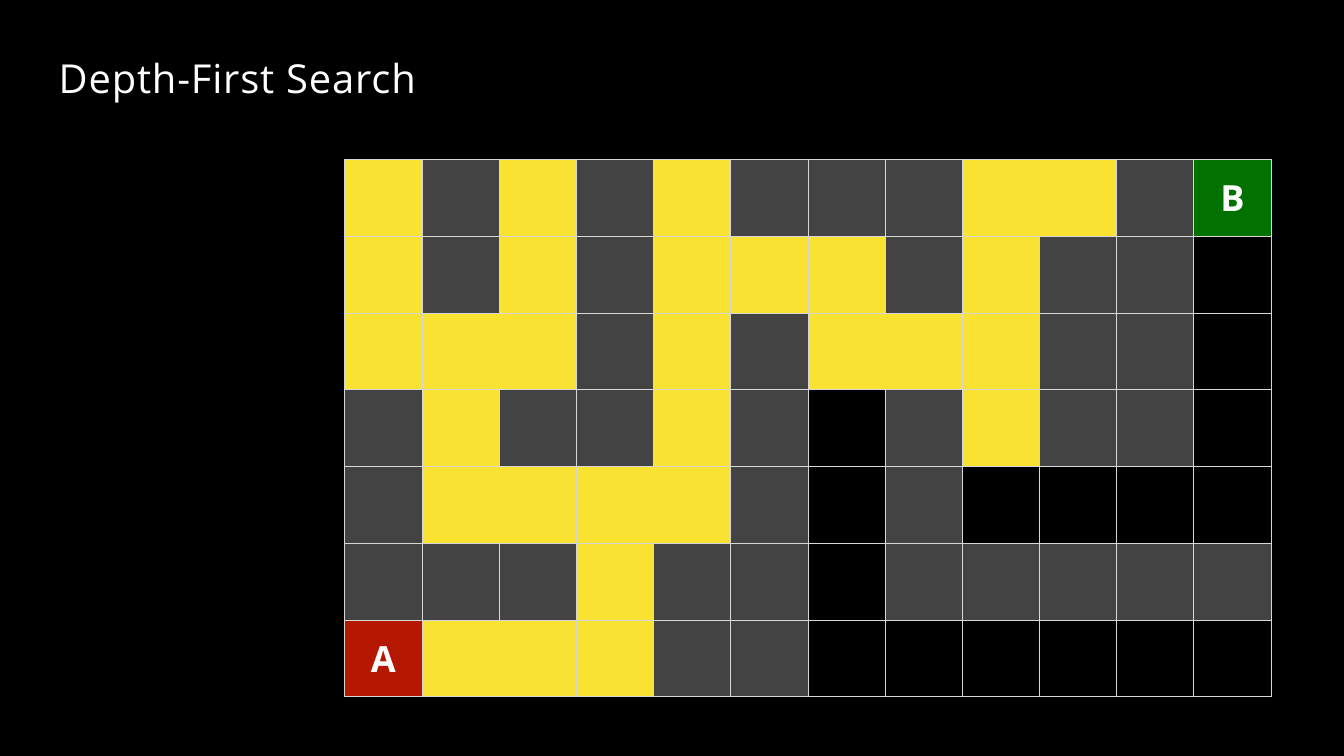
from lxml import etree
from pptx import Presentation
from pptx.dml.color import RGBColor
from pptx.enum import text
from pptx.oxml import ns
from pptx.util import Inches, Pt

TITLE = "Depth-First Search"
# "#" wall, "*" explored, "." unexplored, "A" start, "B" goal
MAZE = [
    "*#*#*###**#B",
    "*#*#***#*##.",
    "***#*#***##.",
    "#*##*#.#*##.",
    "#****#.#....",
    "###*##.#####",
    "A***##......",
]
COLORS = {
    "#": "434343",
    "*": "FAE232",
    ".": "000000",
    "A": "B51700",
    "B": "017100",
    "text": "FFFFFF",
    "border": "D6D7D6",
}
MAZE_LEFT, MAZE_TOP, MAZE_WIDTH, MAZE_HEIGHT = 5.64, 2.61, 15.16, 8.79


def color(name):
    return RGBColor.from_string(COLORS[name])


def write(paragraph, words, size, spacing, bold=False):
    """Add one run; spacing is the gap between letters in points."""
    run = paragraph.add_run()
    run.text = words
    font_format = {"name": "Open Sans", "size": Pt(size), "bold": bold}
    for key, value in font_format.items():
        setattr(run.font, key, value)
    run.font.color.rgb = color("text")
    run._r.get_or_add_rPr().set("spc", str(int(spacing * 100)))


def add_borders(cell):
    properties = cell._tc.get_or_add_tcPr()
    for side in ("lnL", "lnR", "lnT", "lnB"):
        line = etree.SubElement(properties, ns.qn(f"a:{side}"), w=str(Pt(1)))
        fill = etree.SubElement(line, ns.qn("a:solidFill"))
        etree.SubElement(fill, ns.qn("a:srgbClr"), val=COLORS["border"])


def add_title(slide):
    frame = slide.shapes.add_textbox(
        Inches(0.96), Inches(0.86), Inches(12.65), Inches(0.81)).text_frame
    frame_format = {"margin_left": 0, "margin_right": 0, "margin_top": Inches(0.01),
                    "margin_bottom": 0, "word_wrap": True}
    for key, value in frame_format.items():
        setattr(frame, key, value)
    write(frame.paragraphs[0], TITLE, 47, 1)


def add_maze(slide):
    row_count, column_count = len(MAZE), len(MAZE[0])
    maze = slide.shapes.add_table(
        row_count, column_count, Inches(MAZE_LEFT), Inches(MAZE_TOP),
        Inches(MAZE_WIDTH), Inches(MAZE_HEIGHT)).table
    maze.first_row = maze.horz_banding = False
    cell_format = {"margin_left": 0, "margin_right": 0, "margin_top": 0,
                   "margin_bottom": 0, "vertical_anchor": text.MSO_ANCHOR.MIDDLE}
    for row, marks in enumerate(MAZE):
        for column, mark in enumerate(marks):
            cell = maze.cell(row, column)
            for key, value in cell_format.items():
                setattr(cell, key, value)
            add_borders(cell)
            cell.fill.solid()
            cell.fill.fore_color.rgb = color(mark)
            if mark in "AB":
                label = cell.text_frame.paragraphs[0]
                label.alignment = text.PP_ALIGN.CENTER
                write(label, mark, 42.5, 2, bold=True)


def main():
    deck = Presentation()
    deck.slide_width, deck.slide_height = Inches(21.99), Inches(12.37)
    slide = deck.slides.add_slide(deck.slide_layouts[6])
    slide.background.fill.solid()
    slide.background.fill.fore_color.rgb = color(".")
    add_maze(slide)
    add_title(slide)
    deck.save("out.pptx")


if __name__ == "__main__":
    main()
